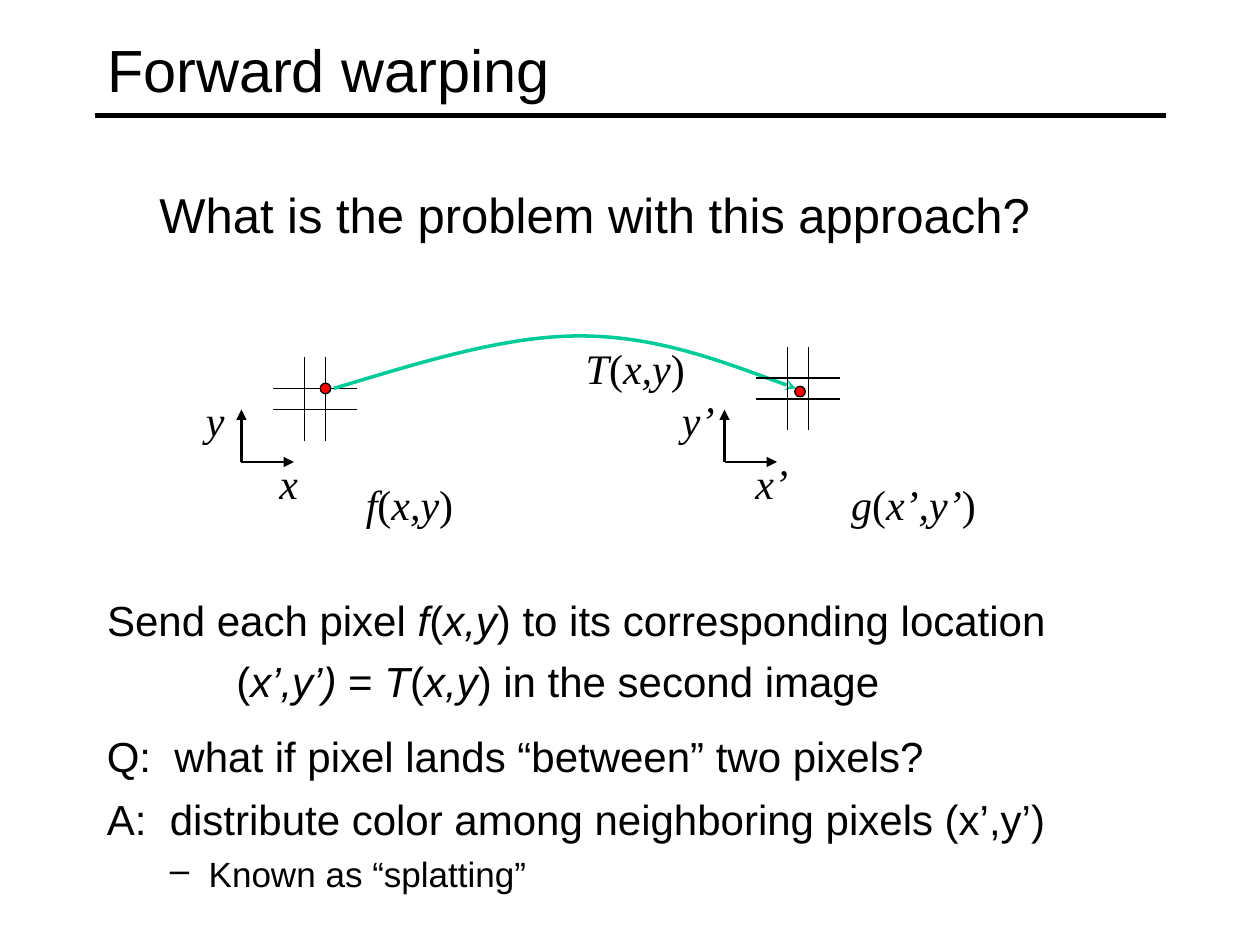
from dataclasses import dataclass

from lxml import etree
from pptx import Presentation
from pptx import util as u
from pptx.dml.color import RGBColor
from pptx.enum import shapes, text
from pptx.oxml.ns import qn

PX = 7620


@dataclass(frozen=True)
class Theme:
    """Colours, fonts and type sizes of the slide."""
    ink: str = "000000"
    arc: str = "00CC99"
    dot: str = "FF0000"
    sans: str = "Arial"
    serif: str = "Times New Roman"
    title: int = 34
    question: int = 28
    body: int = 24
    sub: int = 20


T = Theme()


def px(*values):
    """Turn px lengths into EMU."""
    return [u.Emu(v * PX) for v in values]


def add_xml(parent, tag, **attrs):
    """Append a child element with the given attributes."""
    return etree.SubElement(parent, qn(tag), attrs)


def set_line(sp, width, color=T.ink, tail=None):
    """Format an outline, with an optional arrowhead at its end."""
    sp.line.color.rgb = RGBColor.from_string(color)
    sp.line.width = u.Pt(width)
    if tail:
        add_xml(sp.line._get_or_add_ln(), "a:tailEnd", type=tail)


def add_line(container, x1, y1, x2, y2, width, tail=None):
    """Draw a straight line without a shadow."""
    cx = container.add_connector(shapes.MSO_CONNECTOR.STRAIGHT, *px(x1, y1, x2, y2))
    set_line(cx, width, tail=tail)
    add_xml(cx._element.spPr, "a:effectLst")


def add_grid(s, x, y, size=80, offsets=(30, 50)):
    """Draw two lines crossing two others as one group."""
    grp = s.shapes.add_group_shape().shapes
    for d in offsets:
        add_line(grp, x + d, y, x + d, y + size, 0.75)
    for d in offsets:
        add_line(grp, x, y + d - (0 if x < 600 else 0), x + size, y + d, 0.75)


def add_axes(s, x, y, size=50):
    """Draw an upward and a rightward arrow from one origin."""
    grp = s.shapes.add_group_shape().shapes
    for dx, dy in ((0, -size), (size, 0)):
        add_line(grp, x, y, x + dx, y + dy, 1.5, tail="triangle")


def add_dot(s, x, y, size=10):
    """Draw a pixel dot."""
    sp = s.shapes.add_shape(shapes.MSO_SHAPE.OVAL, *px(x, y, size, size))
    sp.shadow.inherit = False
    sp.fill.solid()
    sp.fill.fore_color.rgb = RGBColor.from_string(T.dot)
    set_line(sp, 0.75)


def add_arc(s, start, curves):
    """Draw a curved arrow from cubic segments of three points each."""
    ends = [c[-1] for c in curves]
    fb = s.shapes.build_freeform(*start, scale=PX)
    fb.add_line_segments(ends, close=False)
    sp = fb.convert_to_shape()
    sp.shadow.inherit = False
    sp.fill.background()
    set_line(sp, 2, T.arc, tail="stealth")
    left = min(x for x, _ in [start, *ends])
    top = min(y for _, y in [start, *ends])
    for seg, curve in zip(list(sp._element.iter(qn("a:lnTo"))), curves):
        seg.tag = qn("a:cubicBezTo")
        seg.remove(seg[0])
        for x, y in curve:
            add_xml(seg, "a:pt", x=str(x - left), y=str(y - top))


def write(p, marked, size=T.body, font=T.sans):
    """Fill a paragraph, with italics between asterisks."""
    for i, part in enumerate(marked.split("*")):
        if part:
            r = p.add_run()
            r.text = part
            fmt = {"name": font, "size": u.Pt(size), "italic": i % 2 == 1}
            for key, value in fmt.items():
                setattr(r.font, key, value)
            r.font.color.rgb = RGBColor.from_string(T.ink)


def indent(p, left, first, before, bullet=None):
    """Set the indents, the space before and the bullet of a paragraph."""
    pPr = p._p.get_or_add_pPr()
    pPr.set("marL", str(left * PX))
    pPr.set("indent", str(first * PX))
    p.space_before = u.Pt(before)
    if bullet:
        add_xml(pPr, "a:buChar", char=bullet)
    else:
        add_xml(pPr, "a:buNone")


def set_frame(sp, box, anchor=text.MSO_ANCHOR.TOP):
    """Place a text shape and return its wrapping text frame."""
    for key, value in zip(("left", "top", "width", "height"), px(*box)):
        setattr(sp, key, value)
    tf = sp.text_frame
    fmt = {"word_wrap": True, "auto_size": text.MSO_AUTO_SIZE.NONE,
           "vertical_anchor": anchor}
    for key, value in fmt.items():
        setattr(tf, key, value)
    return tf


def add_text(s, box):
    """Add a text box and return its text frame."""
    return set_frame(s.shapes.add_textbox(*px(*box)), box)


def add_label(s, marked, x, y, width):
    """Add a centred formula."""
    p = add_text(s, (x, y, width, 60)).paragraphs[0]
    p.alignment = text.PP_ALIGN.CENTER
    write(p, marked, font=T.serif)


def main():
    """Build the slide and save it."""
    prs = Presentation()
    prs.slide_width, prs.slide_height = px(1200, 900)
    s = prs.slides.add_slide(prs.slide_layouts[1])
    title, body = s.placeholders

    add_line(s.shapes, 90, 110, 1110, 110, 3)
    p = set_frame(title, (90, 10, 1020, 110), text.MSO_ANCHOR.MIDDLE).paragraphs[0]
    p.alignment = text.PP_ALIGN.LEFT
    write(p, "Forward warping", T.title)

    tf = set_frame(body, (90, 560, 1020, 250))
    p = tf.paragraphs[0]
    indent(p, 45, -45, 6)
    write(p, "Send each pixel *f*(*x,y*) to its corresponding location")
    p = tf.add_paragraph()
    indent(p, 123, 0, 6)
    write(p, "(*x’,y’) *= *T*(*x,y*) in the second image")

    for x, y in ((230, 440), (690, 440)):
        add_axes(s, x, y)
    add_grid(s, 260, 340)
    add_arc(s, (318, 370), [((398, 346), (479, 320), (552, 320)),
                            ((626, 320), (692, 346), (758, 370))])
    for x, y in ((305, 365), (757, 368)):
        add_dot(s, x, y)
    add_grid(s, 720, 330)

    for label in (("*f*(*x,y*)", 320, 450, 140), ("*g*(*x’,y’*)", 780, 450, 180),
                  ("*T*(*x,y*)", 530, 320, 150),
                  ("*x*", 230, 430, 90), ("*x’*", 690, 430, 90),
                  ("*y*", 160, 370, 90), ("*y’*", 620, 370, 90)):
        add_label(s, *label)

    write(add_text(s, (140, 170, 890, 68)).paragraphs[0],
          "What is the problem with this approach?", T.question)
    for y, line in ((690, "Q:  what if pixel lands “between” two pixels?"),
                    (750, "A:  distribute color among neighboring pixels (x’,y’)")):
        tf = add_text(s, (90, y, 1020, 120))
        indent(tf.paragraphs[0], 45, -45, 6)
        write(tf.paragraphs[0], line)
    p = tf.add_paragraph()
    p.level = 1
    indent(p, 97, -37, 5, "–")
    write(p, "Known as “splatting”", T.sub)

    prs.save("out.pptx")


if __name__ == "__main__":
    main()
